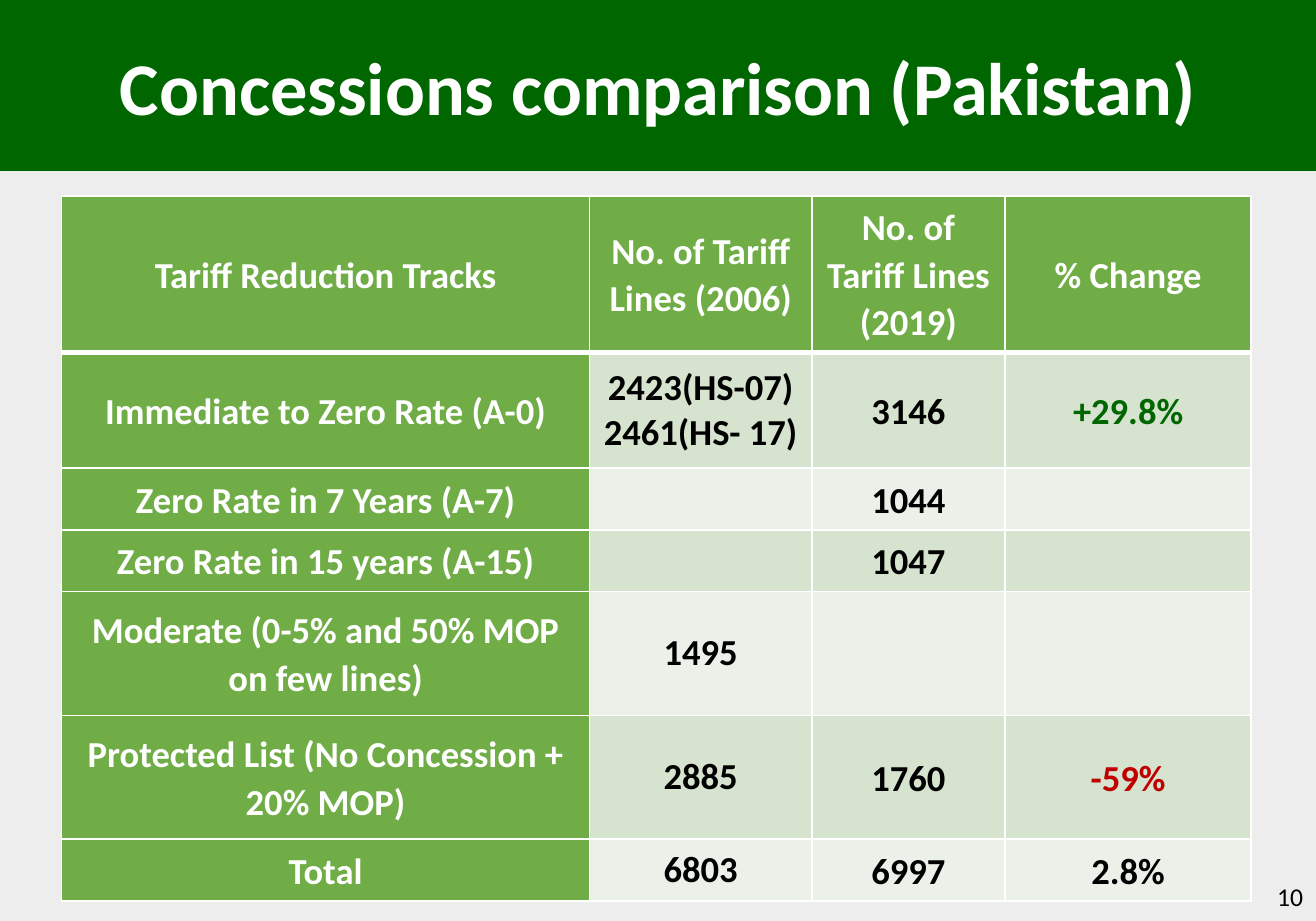
from dataclasses import dataclass

from lxml.etree import SubElement
from pptx import Presentation
from pptx.dml.color import RGBColor
from pptx.enum.text import MSO_ANCHOR, MSO_AUTO_SIZE, PP_ALIGN
from pptx.oxml.ns import qn
from pptx.slide import Slide
from pptx.table import _Cell
from pptx.text.text import TextFrame
from pptx.util import Cm, Pt

HUES = {
    "page": "EDEDED",
    "dark": "006600",
    "head": "70AD47",
    "odd": "D5E3CF",
    "even": "EBF1E9",
    "white": "FFFFFF",
    "black": "000000",
    "red": "C00000",
}
WIDTHS = (10.19, 4.29, 3.73, 4.75)
PAD = {
    "margin_left": Cm(0.18),
    "margin_right": Cm(0.18),
    "margin_top": 0,
    "margin_bottom": 0,
    "vertical_anchor": MSO_ANCHOR.MIDDLE,
}


@dataclass
class Track:
    height: float
    texts: tuple[str, str, str, str]
    tint: str = "black"


TRACKS = (
    Track(3.02, ("Tariff Reduction Tracks", "No. of Tariff Lines (2006)",
                 "No. of Tariff Lines (2019)", "% Change")),
    Track(2.24, ("Immediate to Zero Rate (A-0)", "2423(HS-07)\n2461(HS- 17)",
                 "3146", "+29.8%"), "dark"),
    Track(1.19, ("Zero Rate in 7 Years (A-7)", "", "1044", "")),
    Track(1.19, ("Zero Rate in 15 years (A-15)", "", "1047", "")),
    Track(2.39, ("Moderate (0-5% and 50% MOP on few lines)", "1495", "", "")),
    Track(2.39, ("Protected List (No Concession + 20% MOP)", "2885", "1760", "-59%"), "red"),
    Track(1.19, ("Total", "6803", "6997", "2.8%")),
)


def rgb(hue: str) -> RGBColor:
    return RGBColor.from_string(HUES[hue])


def paint(item, hue: str) -> None:
    item.fill.solid()
    item.fill.fore_color.rgb = rgb(hue)


def write(frame: TextFrame, text: str, size: float, hue: str, bold: bool = True,
          align: PP_ALIGN = PP_ALIGN.CENTER, space: float = 1.0) -> None:
    frame.text = text
    style = {"name": "Calibri", "size": Pt(size), "bold": bold}
    for par in frame.paragraphs:
        par.alignment = align
        par.line_spacing = space
        for run in par.runs:
            for key, value in style.items():
                setattr(run.font, key, value)
            run.font.color.rgb = rgb(hue)


def edge(cell: _Cell, side: str, width: float) -> None:
    line = SubElement(cell._tc.get_or_add_tcPr(), qn(f"a:ln{side}"), w=str(Pt(width)))
    fill = SubElement(line, qn("a:solidFill"))
    SubElement(fill, qn("a:srgbClr"), val=HUES["white"])


def add_title(slide: Slide) -> None:
    title = slide.shapes.title
    place = {"left": 0, "top": 0, "width": Cm(25.4), "height": Cm(3.3)}
    for key, value in place.items():
        setattr(title, key, value)
    paint(title, "dark")
    frame = title.text_frame
    frame.auto_size = MSO_AUTO_SIZE.NONE
    frame.vertical_anchor = MSO_ANCHOR.MIDDLE
    write(frame, "Concessions comparison (Pakistan)", 40.7, "white")


def add_cell(cell: _Cell, track: Track, row: int, col: int) -> None:
    for side in "LRTB":
        thick = (side == "B" and row == 0) or (side == "T" and row == 1)
        edge(cell, side, 3 if thick else 1)
    for key, value in PAD.items():
        setattr(cell, key, value)
    header = row == 0 or col == 0
    paint(cell, "head" if header else "odd" if row % 2 else "even")
    hue = "white" if header else track.tint if col == 3 else "black"
    space = 1.0 if col == 1 and row else 1.07
    if track.texts[col]:
        write(cell.text_frame, track.texts[col], 20, hue, space=space)


def add_grid(slide: Slide) -> None:
    high = sum(track.height for track in TRACKS)
    grid = slide.shapes.add_table(len(TRACKS), len(WIDTHS), Cm(1.19), Cm(3.78),
                                  Cm(sum(WIDTHS)), Cm(high)).table
    for col, width in enumerate(WIDTHS):
        grid.columns[col].width = Cm(width)
    for row, track in enumerate(TRACKS):
        grid.rows[row].height = Cm(track.height)
        for col in range(len(WIDTHS)):
            add_cell(grid.cell(row, col), track, row, col)


def add_number(slide: Slide) -> None:
    box = slide.shapes.add_textbox(Cm(19.69), Cm(16.84), Cm(5.71), Cm(0.94))
    frame = box.text_frame
    frame.word_wrap = True
    frame.vertical_anchor = MSO_ANCHOR.MIDDLE
    write(frame, "10", 14, "black", False, PP_ALIGN.RIGHT)


def main() -> None:
    deck = Presentation()
    deck.slide_width, deck.slide_height = Cm(25.4), Cm(17.78)
    slide = deck.slides.add_slide(deck.slide_layouts[5])
    paint(slide.background, "page")
    add_title(slide)
    add_grid(slide)
    add_number(slide)
    deck.save("out.pptx")


if __name__ == "__main__":
    main()
